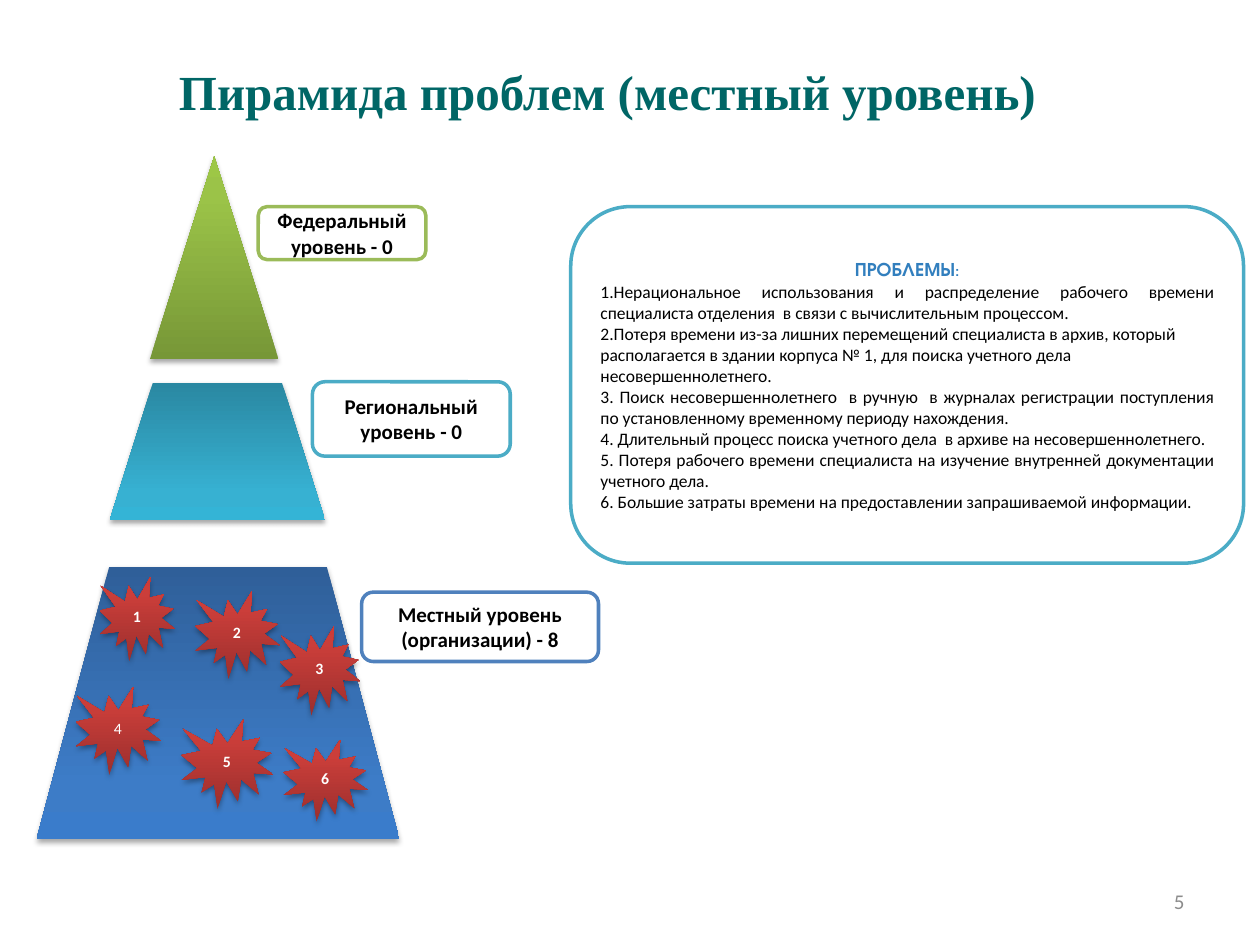
from pptx import Presentation
from pptx.dml.color import RGBColor
from pptx.enum.shapes import MSO_SHAPE
from pptx.enum.text import MSO_ANCHOR, MSO_AUTO_SIZE, PP_ALIGN
from pptx.oxml import parse_xml
from pptx.oxml.ns import nsdecls, qn
from pptx.util import Inches, Pt


def style(p, size, color, bold=False, font="Calibri", align=PP_ALIGN.CENTER):
    p.alignment = align
    for r in p.runs:
        r.font.name, r.font.size, r.font.bold = font, Pt(size), bold
        r.font.color.rgb = RGBColor.from_string(color)


def add_shape(kind, box, fill, line=None):
    """Add a white outlined shape, or a shadowed one when fill is a list of gradient colours."""
    sp = s.shapes.add_shape(kind, *[Inches(v) for v in box])
    sp.shadow.inherit = False
    sp.text_frame.word_wrap = True
    sp.text_frame.vertical_anchor = MSO_ANCHOR.MIDDLE
    if line:
        sp.fill.solid()
        sp.fill.fore_color.rgb = RGBColor.from_string(fill)
        sp.line.color.rgb = RGBColor.from_string(line)
        sp.line.width = Pt(2)
        return sp
    sp.line.fill.background()
    sp.fill.gradient()
    stops = "".join(f'<a:gs pos="{pos}000"><a:srgbClr val="{c}"/></a:gs>'
                    for pos, c in zip((0, 80, 100), fill))
    spPr = sp._element.spPr
    spPr.replace(spPr.find(qn("a:gradFill")), parse_xml(
        f'<a:gradFill {nsdecls("a")} rotWithShape="1"><a:gsLst>{stops}</a:gsLst>'
        '<a:lin ang="16200000" scaled="0"/></a:gradFill>'))
    spPr.find(qn("a:effectLst")).append(parse_xml(
        f'<a:outerShdw {nsdecls("a")} blurRad="{Pt(3.1)}" dist="{Pt(1.8)}" dir="5400000" '
        'rotWithShape="0"><a:srgbClr val="000000"><a:alpha val="35000"/></a:srgbClr></a:outerShdw>'))
    return sp


prs = Presentation()
prs.slide_width, prs.slide_height = Inches(10), Inches(7.5)
s = prs.slides.add_slide(prs.slide_layouts[6])

# Slide number
tf = s.shapes.add_textbox(Inches(7.17), Inches(6.95), Inches(2.33), Inches(0.4)).text_frame
tf.word_wrap = True
tf.vertical_anchor = MSO_ANCHOR.MIDDLE
tf.text = "5"
style(tf.paragraphs[0], 12, "8C8C8C", align=PP_ALIGN.RIGHT)

# Level labels
labels = [
    ("Федеральный уровень - 0", (2.05, 1.64, 1.33, 0.42), "9BBB59"),
    ("Региональный уровень - 0", (2.48, 3.03, 1.57, 0.59), "4BACC6"),
    ("Местный уровень (организации) - 8", (2.87, 4.7, 1.88, 0.55), "4F81BD"),
]
for text, box, color in labels:
    sp = add_shape(MSO_SHAPE.ROUNDED_RECTANGLE, box, "FFFFFF", color)
    sp.text_frame.text = text
    style(sp.text_frame.paragraphs[0], 12, "000000", True)

# Pyramid tiers, from the base up
tiers = [
    (MSO_SHAPE.FLOWCHART_MANUAL_OPERATION, (0.29, 4.5, 2.88, 2.16), 180,
     ("2F5F99", "3D7CC7", "3A7CCB")),
    (MSO_SHAPE.FLOWCHART_MANUAL_OPERATION, (0.87, 3.04, 1.71, 1.09), 180,
     ("2A88A2", "37B1D2", "34B4D6")),
    (MSO_SHAPE.FLOWCHART_EXTRACT, (1.19, 1.24, 1.02, 1.61), 0,
     ("779737", "9BC348", "9DC746")),
]
for kind, box, rotation, colors in tiers:
    add_shape(kind, box, colors).rotation = rotation

# Numbered problem marks, the last one at the back
marks = [
    (6, (2.25, 5.87, 0.67, 0.65)),
    (5, (1.44, 5.71, 0.73, 0.71)),
    (4, (0.6, 5.45, 0.68, 0.7)),
    (3, (2.22, 4.97, 0.64, 0.71)),
    (2, (1.55, 4.69, 0.67, 0.7)),
    (1, (0.79, 4.58, 0.6, 0.67)),
]
for number, box in marks:
    sp = add_shape(MSO_SHAPE.EXPLOSION1, box, ("9C2F2D", "CB3E3A", "CE3B37"))
    sp.text_frame.text = str(number)
    style(sp.text_frame.paragraphs[0], 9, "FFFFFF", bold=number != 4)

# Problem list
problems = [
    "1.Нерациональное использования и распределение рабочего времени специалиста отделения  "
    "в связи с вычислительным процессом.",
    "2.Потеря времени из-за лишних перемещений специалиста в архив, который располагается "
    "в здании корпуса № 1, для поиска учетного дела несовершеннолетнего.",
    "3. Поиск несовершеннолетнего  в ручную  в журналах регистрации поступления "
    "по установленному временному периоду нахождения. ",
    "4. Длительный процесс поиска учетного дела  в архиве на несовершеннолетнего.",
    "5. Потеря рабочего времени специалиста на изучение внутренней документации учетного дела. ",
    "6. Большие затраты времени на предоставлении запрашиваемой информации.",
]
sp = add_shape(MSO_SHAPE.ROUNDED_RECTANGLE, (4.53, 1.64, 5.34, 2.83), "FFFFFF", "4BACC6")
tf = sp.text_frame
p = tf.paragraphs[0]
for text in ("ПРОБЛЕМЫ", ":"):
    p.add_run().text = text
style(p, 11, "327FBE", True, "TeX Gyre Adventor")
p.runs[1].font.size = Pt(8)
for text in problems:
    p = tf.add_paragraph()
    p.text = text
    left = text.startswith("2.")
    style(p, 10, "000000", align=PP_ALIGN.LEFT if left else PP_ALIGN.JUSTIFY)

# Title
tf = s.shapes.add_textbox(Inches(1.28), Inches(0.44), Inches(7.08), Inches(0.57)).text_frame
tf.word_wrap = False
tf.auto_size = MSO_AUTO_SIZE.SHAPE_TO_FIT_TEXT
tf.text = "Пирамида проблем (местный уровень)"
style(tf.paragraphs[0], 28, "006666", True, "Times New Roman")

prs.save("out.pptx")
